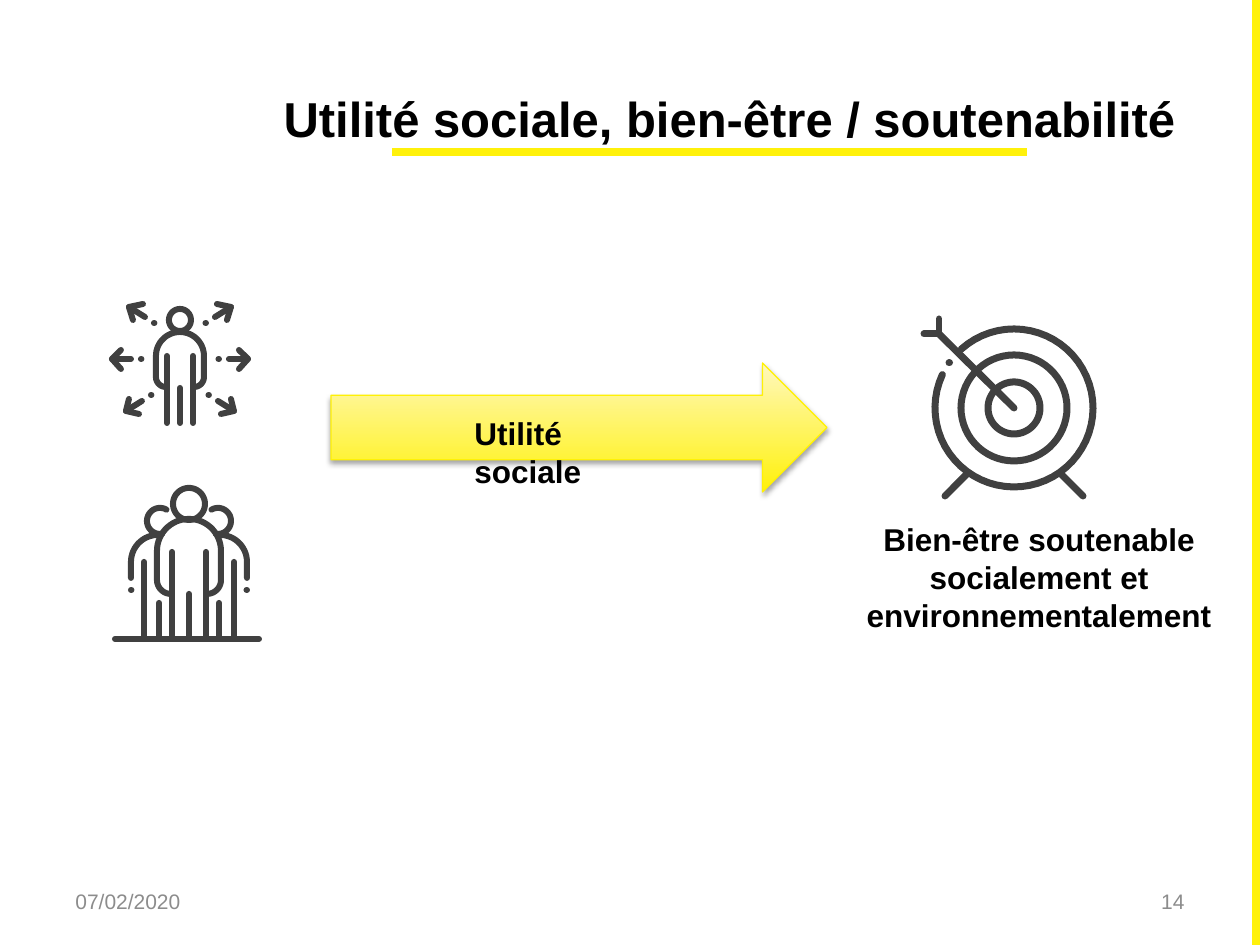
import math

import pptx
import pptx.dml.color
import pptx.enum.shapes
import pptx.enum.text
import pptx.oxml.ns
import pptx.util
from lxml import etree

EMU_PER_PX = 914400 / 126
RGBColor = pptx.dml.color.RGBColor
YELLOW = RGBColor(0xFF, 0xF1, 0x0B)
PALE_YELLOW = RGBColor(0xFF, 0xF8, 0xBD)
ARROW_EDGE = RGBColor(0xFF, 0xF1, 0x05)
CHARCOAL = RGBColor(0x40, 0x40, 0x40)
GREY = RGBColor(0x8C, 0x8C, 0x8C)
BLACK = RGBColor(0, 0, 0)
ALIGN = pptx.enum.text.PP_ALIGN
ANCHOR = pptx.enum.text.MSO_ANCHOR


def px(length):
    return pptx.util.Emu(round(length * EMU_PER_PX))


def add_xml(parent, tag, **attributes):
    return etree.SubElement(parent, pptx.oxml.ns.qn(tag), attributes)


def write_text(shape, text, size=18, color=BLACK, bold=True,
               align=ALIGN.LEFT, anchor=ANCHOR.TOP):
    frame = shape.text_frame
    frame.word_wrap = True
    frame.auto_size = pptx.enum.text.MSO_AUTO_SIZE.NONE
    frame.vertical_anchor = anchor
    frame.text = text
    paragraph = frame.paragraphs[0]
    paragraph.alignment = align
    font = paragraph.runs[0].font
    font.name = "Arial"
    font.size = pptx.util.Pt(size)
    font.bold = bold
    font.color.rgb = color


def add_text(slide, box, text, **text_format):
    shape = slide.shapes.add_textbox(*map(px, box))
    write_text(shape, text, **text_format)


def add_title(slide, box, text):
    """Place the title placeholder above what is already drawn."""
    title = slide.shapes.title
    title.left, title.top, title.width, title.height = map(px, box)
    write_text(title, text, size=28, align=ALIGN.CENTER, anchor=ANCHOR.BOTTOM)
    title.element.getparent().append(title.element)


def add_rule(slide, *ends):
    rule = slide.shapes.add_connector(
        pptx.enum.shapes.MSO_CONNECTOR.STRAIGHT, *map(px, ends))
    rule.line.color.rgb = YELLOW
    rule.line.width = pptx.util.Pt(4.5)
    add_xml(rule.element.spPr, "a:effectLst")


def add_gradient_arrow(slide, box):
    arrow = slide.shapes.add_shape(
        pptx.enum.shapes.MSO_SHAPE.RIGHT_ARROW, *map(px, box))
    arrow.fill.gradient()
    arrow.fill.gradient_angle = 90
    for stop, color, position in zip(
            arrow.fill.gradient_stops, (YELLOW, PALE_YELLOW), (0, 1)):
        stop.color.rgb = color
        stop.position = position
    arrow.line.color.rgb = ARROW_EDGE
    arrow.line.width = pptx.util.Pt(0.75)
    arrow.shadow.inherit = False
    effects = arrow.element.spPr.find(pptx.oxml.ns.qn("a:effectLst"))
    shadow = add_xml(effects, "a:outerShdw", blurRad="39370", dist="22860",
                     dir="5400000", rotWithShape="0")
    shadow_color = add_xml(shadow, "a:srgbClr", val="000000")
    add_xml(shadow_color, "a:alpha", val="35000")


def arc(x, y, radius, start=0, end=360):
    """Points along an arc; degrees run clockwise from the right."""
    steps = max(8, abs(end - start) // 6)
    angles = [math.radians(start + (end - start) * step / steps)
              for step in range(steps + 1)]
    return [(x + radius * math.cos(angle), y + radius * math.sin(angle))
            for angle in angles]


def dot(x, y):
    return [(x, y), (x + 0.5, y)]


def with_mirror(strokes, axis):
    """Strokes together with their reflection in a vertical axis."""
    return strokes + [[(2 * axis - x, y) for x, y in stroke]
                      for stroke in strokes]


def add_icon(slide, strokes, width):
    """Draw all strokes as one round-capped outline."""
    points = [[(px(x), px(y)) for x, y in stroke] for stroke in strokes]
    builder = slide.shapes.build_freeform(*points[0][0])
    for index, stroke in enumerate(points):
        if index:
            builder.move_to(*stroke[0])
        builder.add_line_segments(stroke[1:], close=False)
    icon = builder.convert_to_shape()
    icon.fill.background()
    icon.line.color.rgb = CHARCOAL
    icon.line.width = px(width)
    outline = icon.line._get_or_add_ln()
    outline.set("cap", "rnd")
    add_xml(outline, "a:round")
    icon.shadow.inherit = False


def group_strokes():
    half = [
        arc(171, 580, 14, 90, 180) + arc(189, 551, 32, 180, 270),
        [(172, 552), (172, 639)],
        [(159, 603), (159, 639)],
        [(144, 562), (144, 639)],
        [(131, 578)] + arc(158, 562, 27, 180, 266),
        arc(160, 521, 13, 80, 300),
        dot(131, 590),
    ]
    return with_mirror(half, 189) + [
        arc(189, 504, 16), [(189, 594), (189, 639)], [(115, 639), (259, 639)]]


def person_strokes():
    half = [
        arc(166, 377, 10, 90, 180) + arc(180, 356, 24, 180, 270),
        [(167, 356), (167, 423)],
        [(143, 304), (129, 307), (133, 320)],
        [(129, 307), (145, 317)],
        [(121, 350), (112, 359), (121, 369)],
        [(112, 359), (131, 359)],
        [(129, 399), (126, 411), (139, 414)],
        [(126, 411), (142, 401)],
        dot(154, 323), dot(141, 359), dot(151, 395),
    ]
    return with_mirror(half, 180) + [
        arc(180, 320, 11), [(180, 388), (180, 423)]]


def target_strokes():
    stand = with_mirror([[(967, 474), (945, 496)]], 1014)
    return stand + [
        arc(1014, 408, 79, 228, 565), arc(1014, 408, 53), arc(1014, 408, 26),
        [(1014, 408), (939, 334)],
        [(939, 319), (939, 334), (924, 334)],
        dot(949, 363),
    ]


def main():
    presentation = pptx.Presentation()
    presentation.slide_width, presentation.slide_height = px(1260), px(945)
    slide = presentation.slides.add_slide(presentation.slide_layouts[5])

    add_rule(slide, 1256, 945, 1256, 0)
    add_rule(slide, 392, 152, 1027, 152)
    add_gradient_arrow(slide, (331, 363, 496, 129))
    footer = {"size": 12, "color": GREY, "bold": False, "anchor": ANCHOR.MIDDLE}
    add_text(slide, (63, 876, 294, 50), "07/02/2020", **footer)
    add_text(slide, (903, 876, 294, 50), "14", align=ALIGN.RIGHT, **footer)
    add_title(slide, (262, 57, 935, 97),
              "Utilité sociale, bien-être / soutenabilité")
    add_icon(slide, group_strokes(), 6)
    add_icon(slide, target_strokes(), 7)
    add_text(slide, (823, 514, 432, 127),
             "Bien-être soutenable socialement et environnementalement",
             align=ALIGN.CENTER)
    add_text(slide, (462, 408, 222, 50), "Utilité sociale")
    add_icon(slide, person_strokes(), 6)

    presentation.save("out.pptx")


if __name__ == "__main__":
    main()
